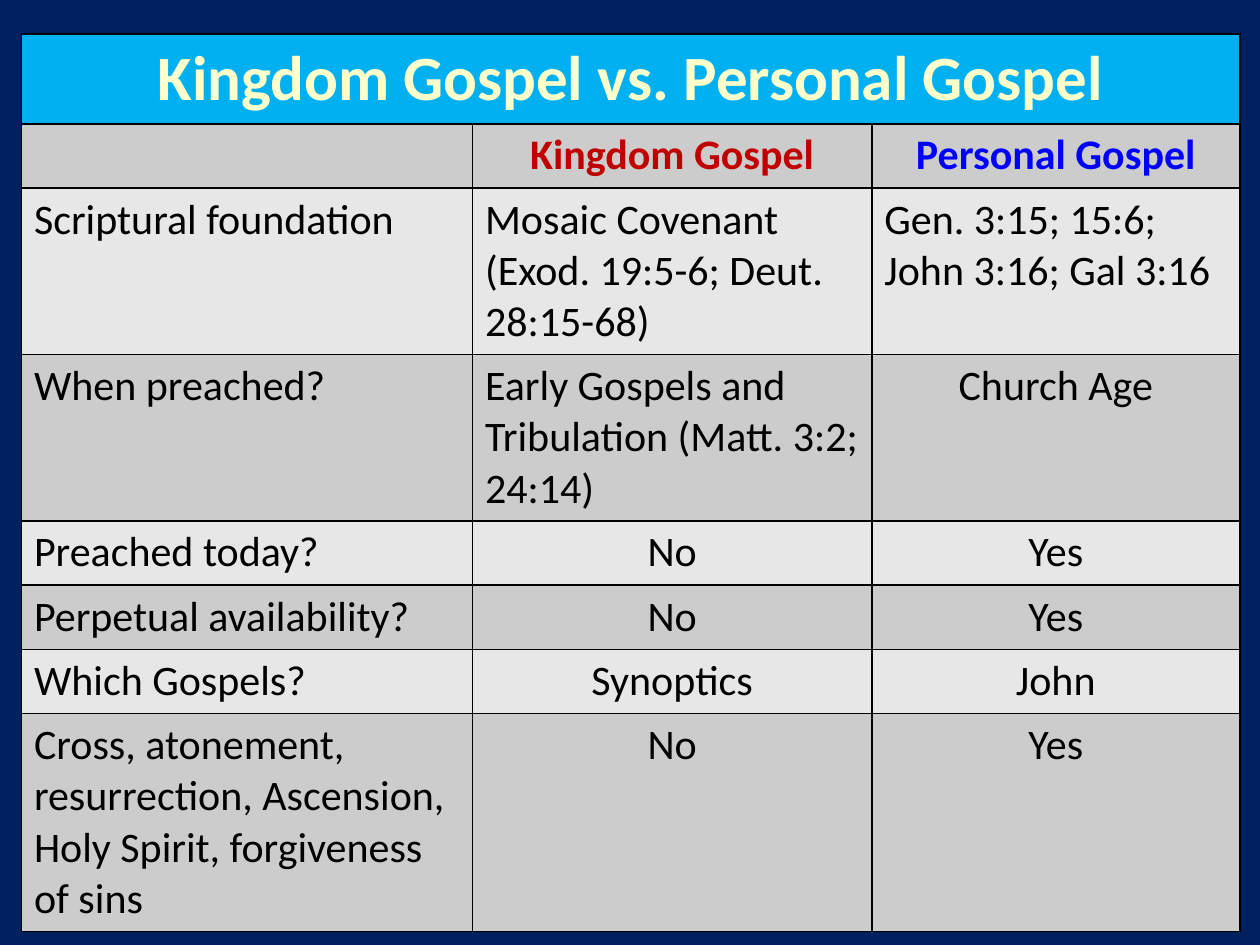
from typing import NamedTuple

from lxml import etree
from pptx import Presentation
from pptx.dml.color import RGBColor
from pptx.enum.text import PP_ALIGN
from pptx.oxml.ns import qn
from pptx.util import Inches, Pt

LEFT, CENTER = PP_ALIGN.LEFT, PP_ALIGN.CENTER
BLANK_LAYOUT = 6
FONT = "Calibri"
COLORS = {
    "background": "002060",
    "banner": "00B0F0",
    "banner_text": "FFFFCC",
    "dark_band": "CCCCCC",
    "light_band": "E7E7E7",
    "kingdom": "C00000",
    "personal": "0000FF",
    "text": "000000",
    "border": "000000",
}
COLUMN_WIDTHS = (3.58, 3.17, 2.92)
BANNER_HEIGHT, HEADER_HEIGHT = 0.71, 0.51


class Comparison(NamedTuple):
    topic: str
    kingdom: str
    personal: str
    height: float = 0.51
    kingdom_align: PP_ALIGN = CENTER
    personal_align: PP_ALIGN = CENTER


COMPARISONS = [
    Comparison("Scriptural foundation",
               "Mosaic Covenant\n(Exod. 19:5-6; Deut. 28:15-68)",
               "Gen. 3:15; 15:6; John 3:16; Gal 3:16", 1.32, LEFT, LEFT),
    Comparison("When preached?",
               "Early Gospels and Tribulation (Matt. 3:2; 24:14)",
               "Church Age", 1.32, LEFT),
    Comparison("Preached today?", "No", "Yes"),
    Comparison("Perpetual availability?", "No", "Yes"),
    Comparison("Which Gospels?", "Synoptics", "John"),
    Comparison("Cross, atonement, resurrection, Ascension, Holy Spirit, "
               "forgiveness of sins", "No", "Yes", 1.73),
]


def rgb(name: str) -> RGBColor:
    return RGBColor.from_string(COLORS[name])


def write(cell, text: str, *, size: int = 24, color: str = "text",
          bold: bool = False, align: PP_ALIGN = LEFT) -> None:
    cell.text = text
    for paragraph in cell.text_frame.paragraphs:
        paragraph.alignment = align
        font = paragraph.font
        for run in paragraph.runs:
            font = run.font
        font.name, font.size, font.bold = FONT, Pt(size), bold
        font.color.rgb = rgb(color)


def paint(cell, fill: str) -> None:
    """Fill a cell and give it a thin border on every side."""
    cell.fill.solid()
    cell.fill.fore_color.rgb = rgb(fill)
    properties = cell._tc.get_or_add_tcPr()
    for position, side in enumerate(("a:lnL", "a:lnR", "a:lnT", "a:lnB")):
        line = etree.Element(qn(side), w=str(Pt(1)))
        solid = etree.SubElement(line, qn("a:solidFill"))
        etree.SubElement(solid, qn("a:srgbClr"), val=COLORS["border"])
        properties.insert(position, line)


def build_table(slide) -> None:
    heights = [BANNER_HEIGHT, HEADER_HEIGHT] + [c.height for c in COMPARISONS]
    table = slide.shapes.add_table(
        len(heights), len(COLUMN_WIDTHS), Inches(0.17), Inches(0.27),
        Inches(sum(COLUMN_WIDTHS)), Inches(sum(heights))).table
    for column, width in zip(table.columns, COLUMN_WIDTHS):
        column.width = Inches(width)

    # Row heights and alternating bands below the banner
    for index, (row, height) in enumerate(zip(table.rows, heights)):
        row.height = Inches(height)
        band = "dark_band" if index % 2 else "light_band"
        for cell in row.cells:
            paint(cell, band if index else "banner")

    # Banner and column headings
    banner = table.cell(0, 0)
    banner.merge(table.cell(0, len(COLUMN_WIDTHS) - 1))
    write(banner, "Kingdom Gospel vs. Personal Gospel", size=36,
          color="banner_text", bold=True, align=CENTER)
    write(table.cell(1, 1), "Kingdom Gospel", color="kingdom", bold=True, align=CENTER)
    write(table.cell(1, 2), "Personal Gospel", color="personal", bold=True, align=CENTER)

    # Comparison rows
    for index, item in enumerate(COMPARISONS, start=2):
        write(table.cell(index, 0), item.topic)
        write(table.cell(index, 1), item.kingdom, align=item.kingdom_align)
        write(table.cell(index, 2), item.personal, align=item.personal_align)


def main() -> None:
    presentation = Presentation()
    presentation.slide_width, presentation.slide_height = Inches(10), Inches(7.5)
    slide = presentation.slides.add_slide(presentation.slide_layouts[BLANK_LAYOUT])
    slide.background.fill.solid()
    slide.background.fill.fore_color.rgb = rgb("background")
    build_table(slide)
    presentation.save("out.pptx")


if __name__ == "__main__":
    main()
